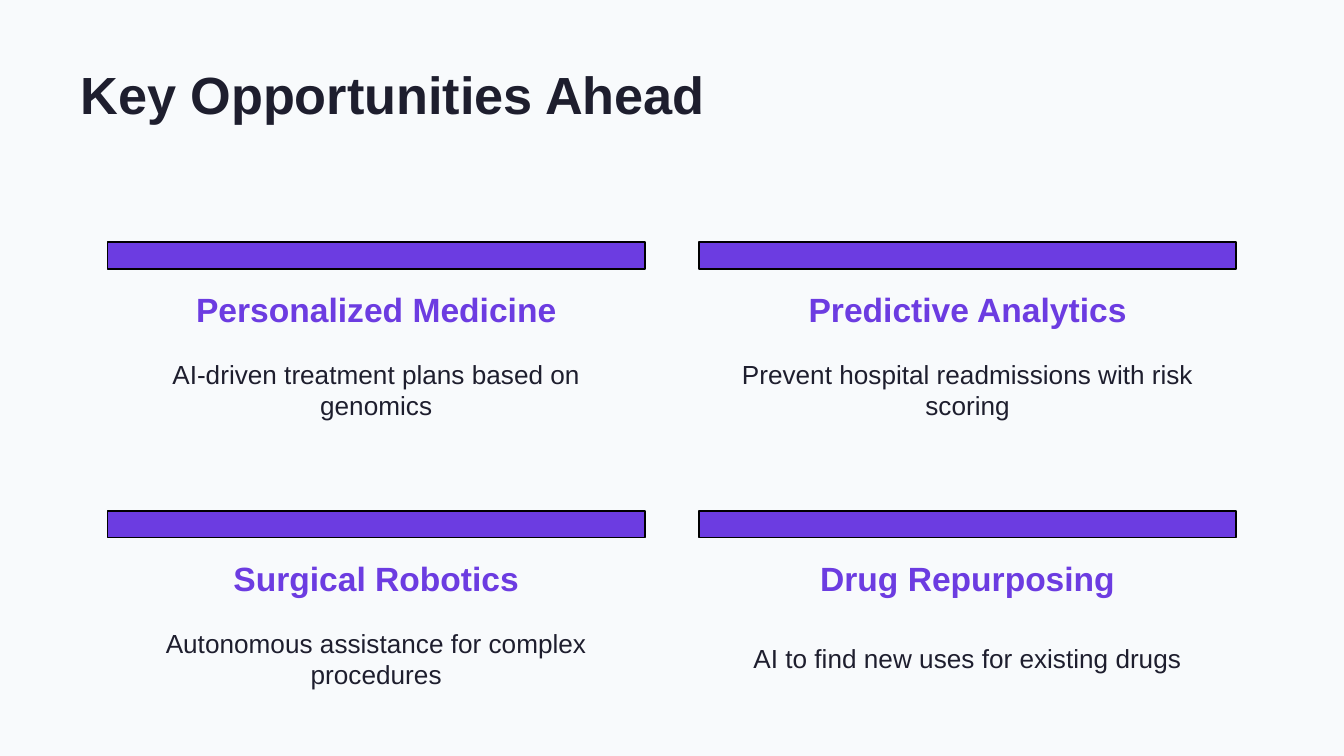
from dataclasses import dataclass

from pptx import Presentation
from pptx.dml.color import RGBColor as RGB
from pptx.enum.shapes import MSO_SHAPE as Shape
from pptx.enum.text import MSO_ANCHOR as Anchor, PP_ALIGN as Align
from pptx.util import Inches, Pt


@dataclass(frozen=True)
class Theme:
    font: str = "Arial"
    back: RGB = RGB.from_string("F8FAFC")
    ink: RGB = RGB.from_string("1E1E2E")
    main: RGB = RGB.from_string("6C3CE1")
    edge: RGB = RGB.from_string("000000")
    title: int = 28
    head: int = 18
    body: int = 14


class Deck:
    def __init__(self, theme, wide, high):
        self.theme = theme
        self.file = Presentation()
        self.file.slide_width = Inches(wide)
        self.file.slide_height = Inches(high)

    def page(self):
        self.slide = self.file.slides.add_slide(self.file.slide_layouts[6])
        fill = self.slide.background.fill
        fill.solid()
        fill.fore_color.rgb = self.theme.back

    def text(self, words, box, size, color, bold=False, align=Align.LEFT):
        frame = self.slide.shapes.add_textbox(*map(Inches, box)).text_frame
        frame.word_wrap = True
        frame.vertical_anchor = Anchor.MIDDLE
        para = frame.paragraphs[0]
        para.alignment = align
        run = para.add_run()
        run.text = words
        style = {"name": self.theme.font, "size": Pt(size), "bold": bold}
        for key, value in style.items():
            setattr(run.font, key, value)
        run.font.color.rgb = color

    def bar(self, box):
        bar = self.slide.shapes.add_shape(Shape.RECTANGLE, *map(Inches, box))
        bar.shadow.inherit = False
        bar.fill.solid()
        bar.fill.fore_color.rgb = self.theme.main
        bar.line.color.rgb = self.theme.edge
        bar.line.width = Pt(1)

    def card(self, left, top, wide, head, body):
        look = self.theme
        pad = 0.2
        self.bar((left, top, wide, 0.2))
        self.text(head, (left, top + 0.3, wide, 0.4), look.head, look.main,
                  bold=True, align=Align.CENTER)
        self.text(body, (left + pad, top + 0.8, wide - 2 * pad, 0.6),
                  look.body, look.ink, align=Align.CENTER)


CARDS = [
    ("Personalized Medicine", "AI‑driven treatment plans based on genomics"),
    ("Predictive Analytics", "Prevent hospital readmissions with risk scoring"),
    ("Surgical Robotics", "Autonomous assistance for complex procedures"),
    ("Drug Repurposing", "AI to find new uses for existing drugs"),
]


def main():
    look = Theme()
    wide = 10
    deck = Deck(look, wide, wide * 9 / 16)
    deck.page()
    deck.text("Key Opportunities Ahead", (0.5, 0.3, 9, 0.8),
              look.title, look.ink, bold=True)
    span, gap = 4, 0.4
    for spot, (head, body) in enumerate(CARDS):
        row, col = divmod(spot, 2)
        deck.card(0.8 + col * (span + gap), 1.8 + row * 2, span, head, body)
    deck.file.save("out.pptx")


if __name__ == "__main__":
    main()
